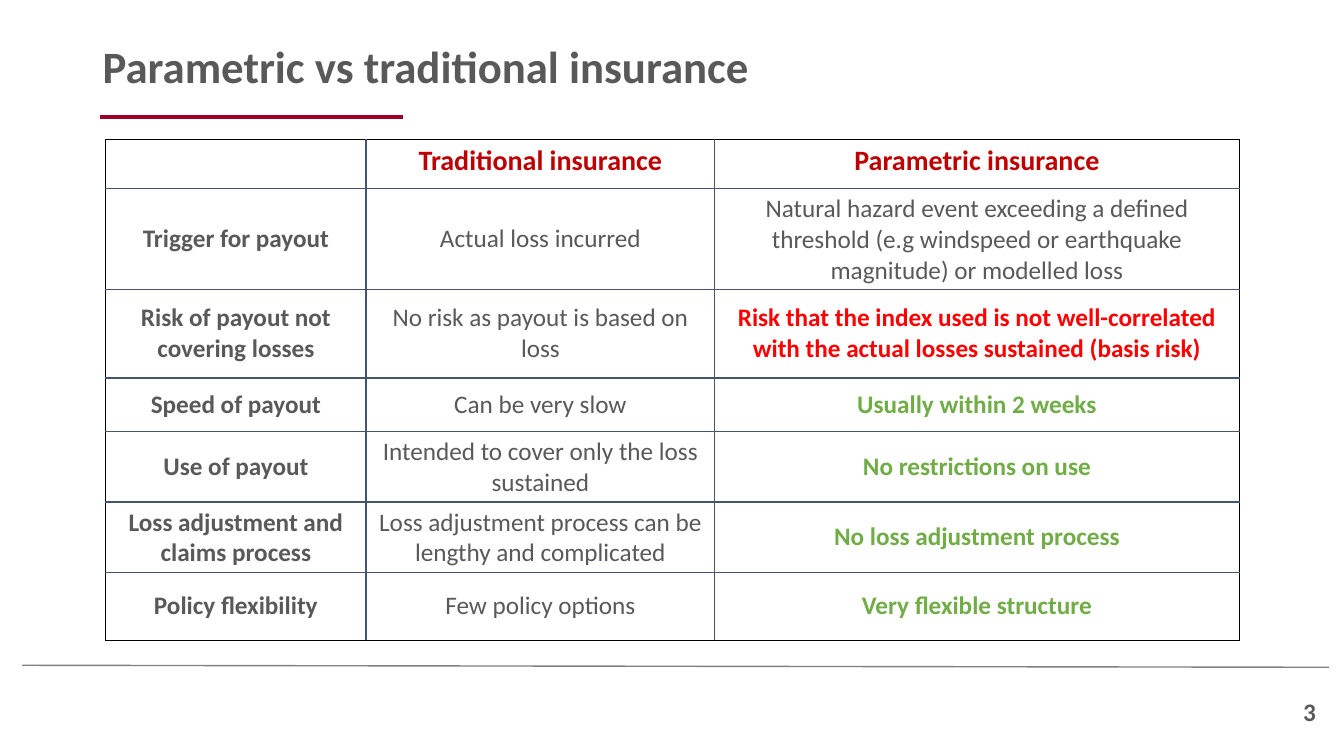
from lxml import etree
from pptx import Presentation
from pptx.dml.color import RGBColor
from pptx.enum.shapes import MSO_CONNECTOR
from pptx.enum.text import MSO_ANCHOR, PP_ALIGN
from pptx.oxml.ns import qn
from pptx.util import Inches, Pt

STRAIGHT = MSO_CONNECTOR.STRAIGHT
TOP, MIDDLE = MSO_ANCHOR.TOP, MSO_ANCHOR.MIDDLE
LEFT, CENTER, RIGHT = PP_ALIGN.LEFT, PP_ALIGN.CENTER, PP_ALIGN.RIGHT

GRAY = RGBColor(0x59, 0x59, 0x59)
RULE_GRAY = RGBColor(0x80, 0x80, 0x80)
MAROON = RGBColor(0x9B, 0x00, 0x26)
DARK_RED = RGBColor(0xC0, 0x00, 0x00)
RED = RGBColor(0xFF, 0x00, 0x00)
GREEN = RGBColor(0x70, 0xAD, 0x47)
SLATE = RGBColor(0x44, 0x54, 0x6A)
BLACK = RGBColor(0x00, 0x00, 0x00)
WHITE = RGBColor(0xFF, 0xFF, 0xFF)

COLUMN_WIDTHS = [2.58, 3.46, 5.2]
ROW_HEIGHTS = [0.49, 0.88, 0.88, 0.53, 0.62, 0.62, 0.67]
HEADINGS = ["", "Traditional insurance", "Parametric insurance"]
# Aspect, traditional insurance, parametric insurance, format of the last
PLAIN = {"color": GRAY, "bold": False}
DRAWBACK = {"color": RED}
BENEFIT = {"color": GREEN}
COMPARISON = [
    ("Trigger for payout", "Actual loss incurred",
     "Natural hazard event exceeding a defined threshold "
     "(e.g windspeed or earthquake magnitude) or modelled loss", PLAIN),
    ("Risk of payout not covering losses", "No risk as payout is based on loss",
     "Risk that the index used is not well-correlated "
     "with the actual losses sustained (basis risk)", DRAWBACK),
    ("Speed of payout", "Can be very slow", "Usually within 2 weeks", BENEFIT),
    ("Use of payout", "Intended to cover only the loss sustained",
     "No restrictions on use", BENEFIT),
    ("Loss adjustment and claims process",
     "Loss adjustment process can be lengthy and complicated",
     "No loss adjustment process", BENEFIT),
    ("Policy flexibility", "Few policy options", "Very flexible structure", BENEFIT),
]


def write(frame, text, size=18, color=GRAY, bold=True, align=CENTER, spacing=1.0):
    para = frame.paragraphs[0]
    para.alignment = align
    para.line_spacing = spacing
    span = para.add_run()
    span.text = text
    span.font.name = "Calibri"
    span.font.size = Pt(size)
    span.font.bold = bold
    span.font.color.rgb = color


def set_borders(cell, colors):
    """Colours map the sides L, R, T and B, in that order."""
    properties = cell._tc.get_or_add_tcPr()
    for position, (side, color) in enumerate(colors.items()):
        border = etree.Element(qn(f"a:ln{side}"), w=str(Pt(1)))
        fill = etree.SubElement(border, qn("a:solidFill"))
        etree.SubElement(fill, qn("a:srgbClr"), val=str(color))
        properties.insert(position, border)


class SlideBuilder:
    def __init__(self, page):
        self.page = page

    def line(self, start, end, color, width):
        ends = [Inches(value) for value in (*start, *end)]
        line = self.page.shapes.add_connector(STRAIGHT, *ends)
        line.line.color.rgb = color
        line.line.width = Pt(width)
        etree.SubElement(line._element.spPr, qn("a:effectLst"))

    def text(self, area, text, anchor=TOP, **style):
        box = self.page.shapes.add_textbox(*[Inches(value) for value in area])
        box.text_frame.word_wrap = True
        box.text_frame.vertical_anchor = anchor
        write(box.text_frame, text, **style)

    def table(self, left, top, widths, heights, rows):
        """Each row is a list of (text, format) pairs."""
        frame = self.page.shapes.add_table(
            len(heights), len(widths), Inches(left), Inches(top),
            Inches(sum(widths)), Inches(sum(heights)))
        table = frame.table
        table.first_row = table.horz_banding = False
        for column, width in zip(table.columns, widths):
            column.width = Inches(width)
        last_row, last_column = len(heights) - 1, len(widths) - 1
        for r, row in enumerate(rows):
            table.rows[r].height = Inches(heights[r])
            for c, (text, style) in enumerate(row):
                cell = table.cell(r, c)
                cell.fill.solid()
                cell.fill.fore_color.rgb = WHITE
                cell.vertical_anchor = MIDDLE if r else TOP
                if text:
                    write(cell.text_frame, text, **style)
                set_borders(cell, {
                    "L": BLACK if c == 0 else SLATE,
                    "R": BLACK if c == last_column else SLATE,
                    "T": BLACK if r == 0 else SLATE,
                    "B": BLACK if r == last_row else SLATE,
                })


def main():
    deck = Presentation()
    deck.slide_width, deck.slide_height = Inches(13.33), Inches(7.5)
    builder = SlideBuilder(deck.slides.add_slide(deck.slide_layouts[6]))

    # Footer rule and title underline
    builder.line((0.22, 6.6), (13.18, 6.62), RULE_GRAY, 1)
    builder.line((0.99, 1.16), (4, 1.16), MAROON, 2.5)

    # Title and page number
    builder.text((0.92, 0.4, 11.5, 0.76), "Parametric vs traditional insurance",
                 size=32, align=LEFT, spacing=0.9)
    builder.text((12.42, 6.86, 0.73, 0.4), "3", anchor=MIDDLE, align=RIGHT)

    # Comparison table
    rows = [[(heading, {"size": 20, "color": DARK_RED}) for heading in HEADINGS]]
    for aspect, traditional, parametric, style in COMPARISON:
        rows.append([(aspect, {}), (traditional, PLAIN), (parametric, style)])
    builder.table(1.05, 1.38, COLUMN_WIDTHS, ROW_HEIGHTS, rows)

    deck.save("out.pptx")


if __name__ == "__main__":
    main()
